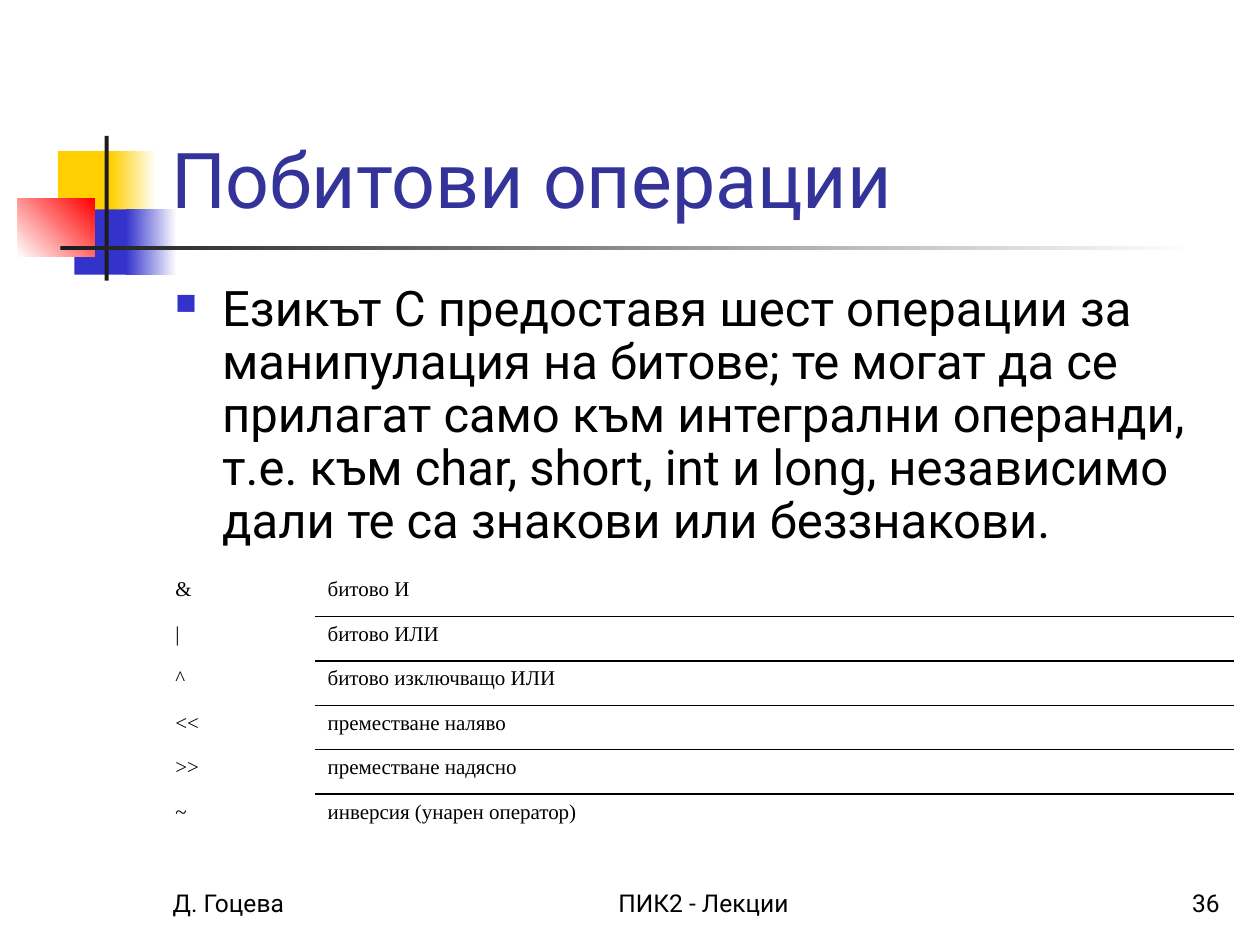
from dataclasses import dataclass

from lxml import etree
from pptx import Presentation
from pptx import util as u
from pptx.dml.color import RGBColor
from pptx.enum import shapes, text
from pptx.oxml import ns

COLORS = {
    "white": "FFFFFF", "black": "000000", "ink": "1C1C1C", "yellow": "FFCF01",
    "blue": "3333CC", "red": "FF0000", "title": "333399",
}


@dataclass
class Area:
    left: float
    top: float
    width: float
    height: float

    def lengths(self) -> list[u.Cm]:
        return [u.Cm(n) for n in (self.left, self.top, self.width, self.height)]


@dataclass
class Block:
    """A rectangle of one colour, or a gradient when end is given."""
    area: Area
    start: str
    end: str = ""
    angle: int = 0


@dataclass
class Label:
    area: Area
    words: str
    size: float = 14
    color: str = "black"
    align: text.PP_ALIGN = text.PP_ALIGN.LEFT
    anchor: text.MSO_ANCHOR = text.MSO_ANCHOR.BOTTOM


ORNAMENT = [
    Block(Area(1.17, 3.05, 1.22, 1.32), "yellow"),
    Block(Area(2.24, 3.05, 0.91, 1.32), "yellow", "white"),
    Block(Area(1.5, 4.22, 1.17, 1.32), "blue"),
    Block(Area(2.54, 4.22, 1.02, 1.32), "blue", "white"),
    Block(Area(0.36, 4.01, 1.55, 1.17), "white", "red", 45),
    Block(Area(2.11, 2.74, 0.08, 2.92), "ink"),
    Block(Area(1.22, 4.95, 22.86, 0.09), "ink", "white"),
]
FOOTERS = [
    Label(Area(3.23, 17.35, 5.28, 1.27), "Д. Гоцева"),
    Label(Area(10.16, 17.35, 8.05, 1.27), "ПИК2 - Лекции", align=text.PP_ALIGN.CENTER),
    Label(Area(19.56, 17.35, 5.28, 1.27), "36", align=text.PP_ALIGN.RIGHT),
]
TITLE = Label(Area(3.2, 0.58, 21.64, 4.06), "Побитови операции", 44, "title")
BODY = Label(
    Area(3.28, 5.61, 21.59, 5.49),
    "Езикът С предоставя шест операции за манипулация на битове; те могат да се "
    "прилагат само към интегрални операнди, т.е. към char, short, int и long, "
    "независимо дали те са знакови или беззнакови.",
    28, anchor=text.MSO_ANCHOR.TOP,
)
OPERATORS = [
    ("&", "битово И"),
    ("|", "битово ИЛИ"),
    ("^", "битово изключващо ИЛИ"),
    ("<<", "преместване наляво"),
    (">>", "преместване надясно"),
    ("~", "инверсия (унарен оператор)"),
]
TABLE_AREA = Area(3.28, 11.53, 21.59, 5.38)
SYMBOL_WIDTH = 3.07


def rgb(name: str) -> RGBColor:
    return RGBColor.from_string(COLORS[name])


def style_runs(para, font: str, size: float, color: str) -> None:
    for span in para.runs:
        span.font.name = font
        span.font.size = u.Pt(size)
        span.font.color.rgb = rgb(color)


def draw_block(page, block: Block) -> None:
    shape = page.shapes.add_shape(shapes.MSO_SHAPE.RECTANGLE, *block.area.lengths())
    shape.shadow.inherit = False
    shape.line.fill.background()
    if not block.end:
        shape.fill.solid()
        shape.fill.fore_color.rgb = rgb(block.start)
        return
    shape.fill.gradient()
    shape.fill.gradient_angle = block.angle
    for stop, position, name in zip(shape.fill.gradient_stops, (0, 1), (block.start, block.end)):
        stop.position = position
        stop.color.rgb = rgb(name)


def draw_label(page, label: Label):
    """Add the text box and return its paragraph."""
    box = page.shapes.add_textbox(*label.area.lengths())
    frame = box.text_frame
    frame.word_wrap = True
    frame.vertical_anchor = label.anchor
    frame.text = label.words
    para = frame.paragraphs[0]
    para.alignment = label.align
    style_runs(para, "Roboto", label.size, label.color)
    return para


def add_bullet(para) -> None:
    para.line_spacing = 0.9
    para.space_before = u.Pt(5.6)
    props = para._p.get_or_add_pPr()
    indent = u.Cm(0.95)
    props.set("marL", str(indent))
    props.set("indent", str(-indent))
    color = etree.SubElement(props, ns.qn("a:buClr"))
    etree.SubElement(color, ns.qn("a:srgbClr"), val=COLORS["blue"])
    etree.SubElement(props, ns.qn("a:buSzPct"), val="60000")
    etree.SubElement(props, ns.qn("a:buChar"), char="■")


def set_borders(cell, ruled: set[str]) -> None:
    """Rule the named sides (L, R, T, B) and hide the others."""
    props = cell._tc.get_or_add_tcPr()
    for side in "LRTB":
        line = etree.SubElement(props, ns.qn(f"a:ln{side}"), w=str(u.Pt(1)))
        if side in ruled:
            fill = etree.SubElement(line, ns.qn("a:solidFill"))
            etree.SubElement(fill, ns.qn("a:srgbClr"), val=COLORS["black"])
        else:
            etree.SubElement(line, ns.qn("a:noFill"))


def draw_operators(page) -> None:
    last = len(OPERATORS) - 1
    table = page.shapes.add_table(len(OPERATORS), 2, *TABLE_AREA.lengths()).table
    table.first_row = table.horz_banding = False
    table.columns[0].width = u.Cm(SYMBOL_WIDTH)
    table.columns[1].width = u.Cm(TABLE_AREA.width - SYMBOL_WIDTH)
    for row, entry in enumerate(OPERATORS):
        for column, words in enumerate(entry):
            cell = table.cell(row, column)
            cell.text = words
            style_runs(cell.text_frame.paragraphs[0], "Times New Roman", 12, "black")
            ruled = set()
            if column == 1:
                ruled = ({"T"} if row > 0 else set()) | ({"B"} if row < last else set())
            set_borders(cell, ruled)
            cell.fill.background()


def main() -> None:
    deck = Presentation()
    deck.slide_width, deck.slide_height = u.Cm(25.4), u.Cm(19.05)
    page = deck.slides.add_slide(deck.slide_layouts[6])
    for block in ORNAMENT:
        draw_block(page, block)
    for label in [*FOOTERS, TITLE]:
        draw_label(page, label)
    add_bullet(draw_label(page, BODY))
    draw_operators(page)
    deck.save("out.pptx")


if __name__ == "__main__":
    main()
